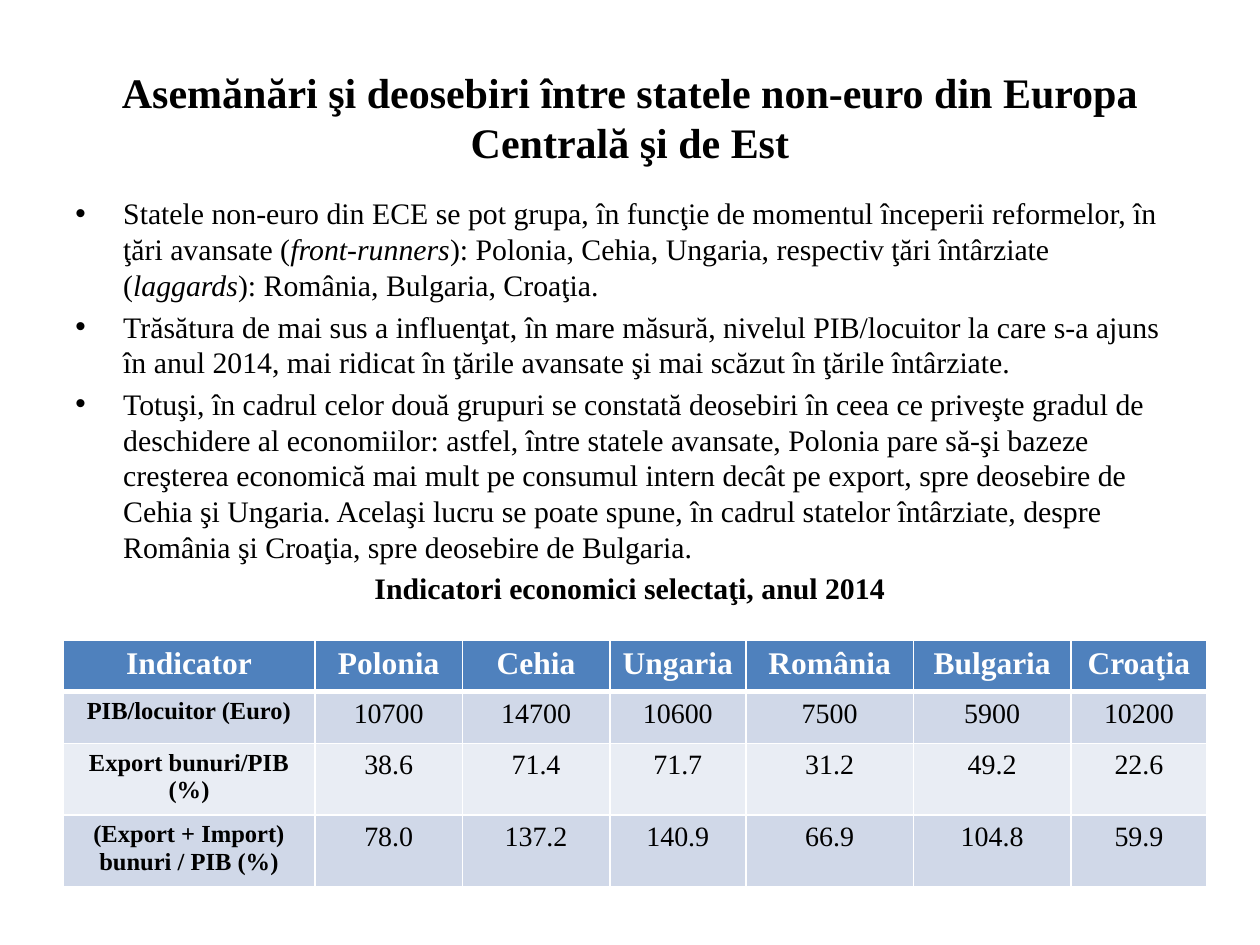
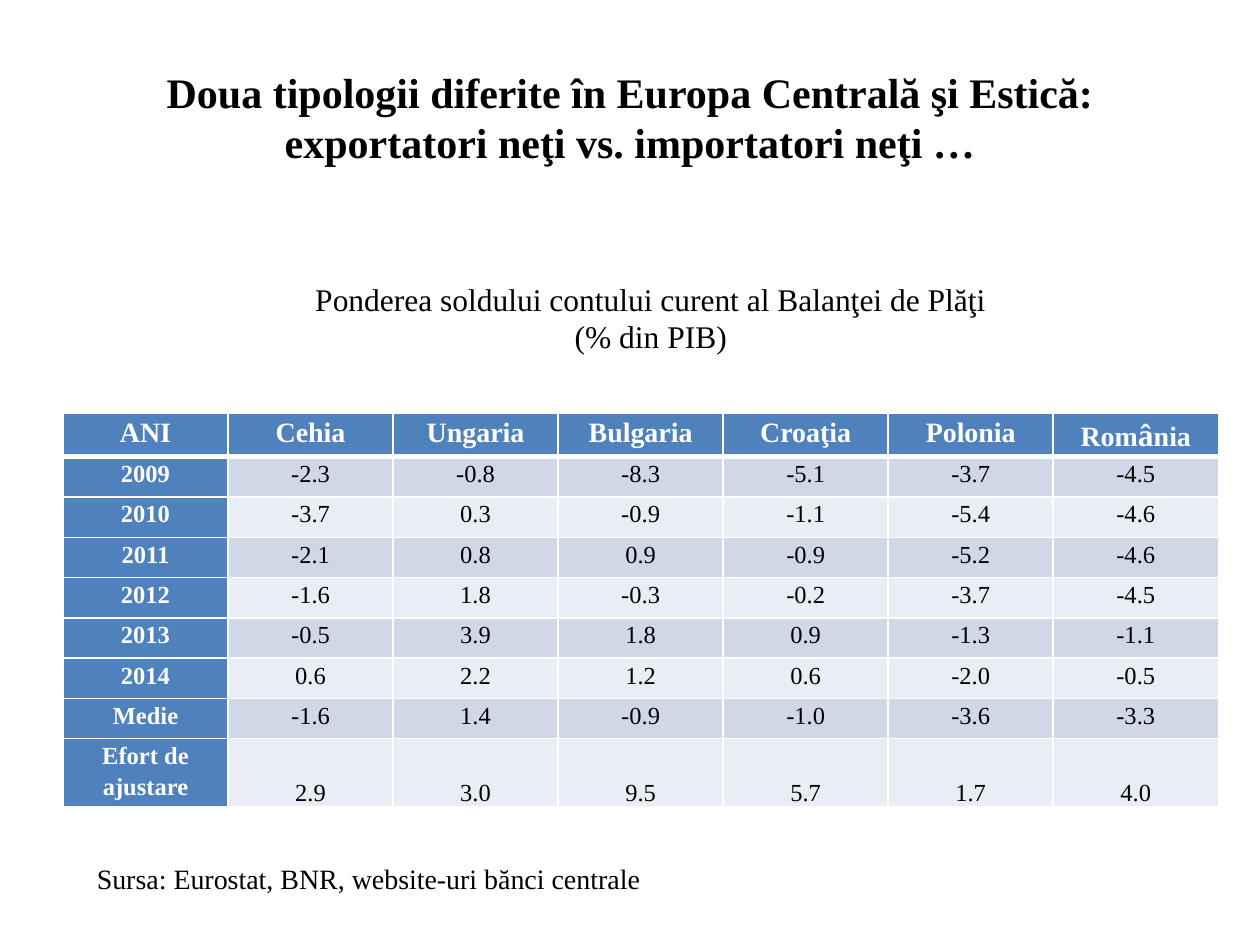
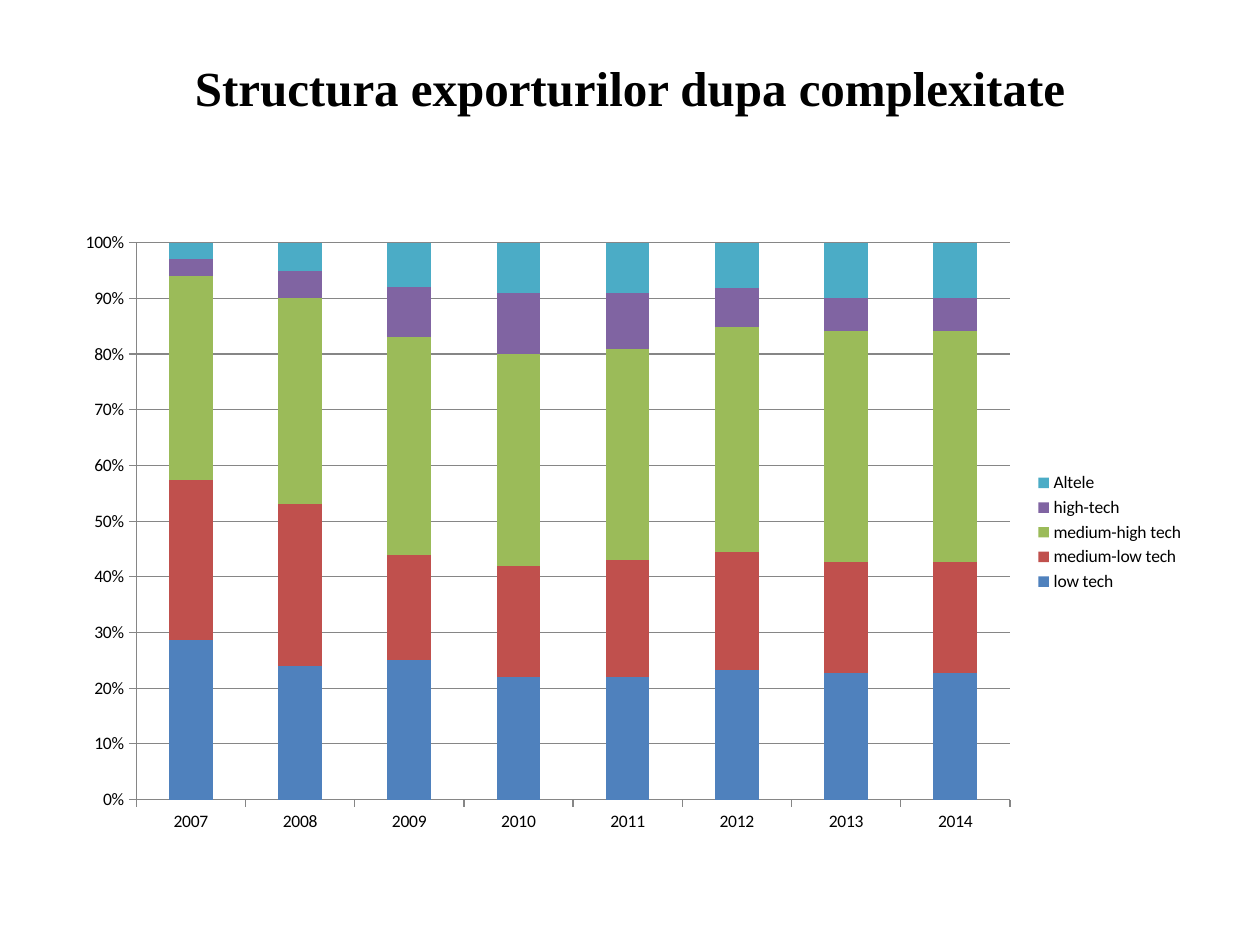
from lxml.etree import SubElement
from pptx import Presentation
from pptx.chart.data import CategoryChartData
from pptx.dml.color import RGBColor
from pptx.enum.chart import XL_CHART_TYPE, XL_LEGEND_POSITION, XL_TICK_MARK
from pptx.enum.text import MSO_ANCHOR, PP_ALIGN
from pptx.oxml import parse_xml
from pptx.oxml.ns import nsdecls, qn
from pptx.util import Inches, Pt

COLORS = {
    "text": "000000", "white": "FFFFFF", "header": "4F81BD",
    "odd_row": "D0D8E8", "even_row": "E9EDF4", "axis": "868686",
    "low tech": "4F81BD", "medium-low tech": "C0504D",
    "medium-high tech": "9BBB59", "high-tech": "8064A2", "Altele": "4BACC6",
}
FONT = "Times New Roman"
CENTER = PP_ALIGN.CENTER


def write_text(frame, paragraphs, size=18, color="text", bold=False, align=PP_ALIGN.LEFT,
               line_spacing=None, space_before=None, bullet=False):
    """Append paragraphs; each is a string or a list of strings and (string, font settings)."""
    frame.word_wrap = True
    for content in paragraphs:
        first = frame.paragraphs[0]
        paragraph = frame.add_paragraph() if first.runs else first
        paragraph.alignment = align
        paragraph.line_spacing = line_spacing
        paragraph.space_before = space_before
        if bullet:
            properties = paragraph._p.get_or_add_pPr()
            properties.set("marL", str(Inches(0.38)))
            properties.set("indent", str(-Inches(0.38)))
            SubElement(properties, qn("a:buFont"), typeface="Arial")
            SubElement(properties, qn("a:buChar"), char="•")
        for item in [content] if isinstance(content, str) else content:
            text, settings = (item, {}) if isinstance(item, str) else item
            run = paragraph.add_run()
            run.text = text
            run.font.name = FONT
            run.font.size = Pt(settings.get("size", size))
            run.font.bold = bold
            run.font.italic = settings.get("italic", False)
            run.font.color.rgb = RGBColor.from_string(COLORS[color])


def add_banded_table(slide, rows, left, top, widths, heights, header_size, label_size, value_size,
                     label_filled=False, line_spacing=None, compact=False):
    table = slide.shapes.add_table(len(rows), len(widths), Inches(left), Inches(top),
                                   Inches(sum(widths)), Inches(sum(heights))).table
    table.first_col = label_filled
    for column, width in zip(table.columns, widths):
        column.width = Inches(width)
    for row_index, (row, values) in enumerate(zip(table.rows, rows)):
        row.height = Inches(heights[row_index])
        for column_index, (cell, value) in enumerate(zip(row.cells, values)):
            is_header, is_label = row_index == 0, column_index == 0
            filled = is_header or (is_label and label_filled)
            band = "odd_row" if row_index % 2 else "even_row"
            cell.fill.solid()
            cell.fill.fore_color.rgb = RGBColor.from_string(COLORS["header" if filled else band])
            if compact:
                cell.margin_left = cell.margin_right = Inches(0.07)
                cell.margin_top = cell.margin_bottom = 0
            size = header_size if is_header else label_size if is_label else value_size
            write_text(cell.text_frame, [value], size=size, color="white" if filled else "text",
                       bold=is_header or is_label, align=CENTER, line_spacing=line_spacing)
            border_widths = {"L": 1, "R": 1, "T": 3 if row_index == 1 else 1, "B": 3 if is_header else 1}
            for position, (side, width) in enumerate(border_widths.items()):
                cell._tc.get_or_add_tcPr().insert(position, parse_xml(
                    f'<a:ln{side} {nsdecls("a")} w="{Pt(width)}"><a:solidFill>'
                    f'<a:srgbClr val="{COLORS["white"]}"/></a:solidFill></a:ln{side}>'))
    return table


presentation = Presentation()
presentation.slide_width, presentation.slide_height = Inches(10), Inches(7.5)

# Titles shared by all slides: lines, size, bottom margin
titles = [
    (["Asemănări şi deosebiri între statele non-euro din Europa Centrală şi de Est"], 24, 0.05),
    (["Doua tipologii diferite în Europa Centrală şi Estică:",
      "exportatori neţi vs. importatori neţi …"], 24, 0.05),
    (["Structura exporturilor dupa complexitate"], 28, 0.52),
]
slides = []
for lines, size, bottom_margin in titles:
    slide = presentation.slides.add_slide(presentation.slide_layouts[6])
    frame = slide.shapes.add_textbox(Inches(0.5), Inches(0.3), Inches(9), Inches(1.25)).text_frame
    frame.vertical_anchor = MSO_ANCHOR.MIDDLE
    frame.margin_bottom = Inches(bottom_margin)
    write_text(frame, lines, size=size, bold=True, align=CENTER)
    slides.append(slide)
similarities_slide, typologies_slide, exports_slide = slides

# Slide 1: similarities and differences
body = similarities_slide.shapes.add_textbox(Inches(0.5), Inches(1.5), Inches(9), Inches(5.75)).text_frame
write_text(body, [
    ["Statele non-euro din ECE se pot grupa, în funcţie de momentul începerii reformelor, în ţări avansate (",
     ("front-runners", {"italic": True}),
     "): Polonia, Cehia, Ungaria, respectiv ţări întârziate (",
     ("laggards", {"italic": True}),
     "): România, Bulgaria, Croaţia."],
    "Trăsătura de mai sus a influenţat, în mare măsură, nivelul PIB/locuitor la care s-a ajuns în anul 2014, "
    "mai ridicat în ţările avansate şi mai scăzut în ţările întârziate.",
    "Totuşi, în cadrul celor două grupuri se constată deosebiri în ceea ce priveşte gradul de deschidere al "
    "economiilor: astfel, între statele avansate, Polonia pare să-şi bazeze creşterea economică mai mult pe "
    "consumul intern decât pe export, spre deosebire de Cehia şi Ungaria. Acelaşi lucru se poate spune, în "
    "cadrul statelor întârziate, despre România şi Croaţia, spre deosebire de Bulgaria.",
], size=17, space_before=Pt(3.4), bullet=True)
write_text(body, ["Indicatori economici selectaţi, anul 2014"], size=17, bold=True, align=CENTER,
           space_before=Pt(3.4))

indicator_rows = [
    ["Indicator", "Polonia", "Cehia", "Ungaria", "România", "Bulgaria", "Croaţia"],
    ["PIB/locuitor (Euro)", "10700", "14700", "10600", "7500", "5900", "10200"],
    ["Export bunuri/PIB (%)", "38.6", "71.4", "71.7", "31.2", "49.2", "22.6"],
    ["(Export + Import) bunuri / PIB (%)", "78.0", "137.2", "140.9", "66.9", "104.8", "59.9"],
]
add_banded_table(similarities_slide, indicator_rows, 0.5, 5.08, [2, 1.17, 1.17, 1.08, 1.33, 1.25, 1.08],
                 [0.41, 0.41, 0.53, 0.53], header_size=18, label_size=14, value_size=16)

# Slide 2: current account balances
caption = typologies_slide.shapes.add_textbox(Inches(1.08), Inches(2.17), Inches(8.17), Inches(1.31))
write_text(caption.text_frame, ["Ponderea soldului contului curent al Balanţei de Plăţi", "(% din PIB)"],
           align=CENTER)
balance_rows = [
    ["ANI", "Cehia", "Ungaria", "Bulgaria", "Croaţia", "Polonia", ["Rom", ("â", {"size": 18}), "nia"]],
    ["2009", "-2.3", "-0.8", "-8.3", "-5.1", "-3.7", "-4.5"],
    ["2010", "-3.7", "0.3", "-0.9", "-1.1", "-5.4", "-4.6"],
    ["2011", "-2.1", "0.8", "0.9", "-0.9", "-5.2", "-4.6"],
    ["2012", "-1.6", "1.8", "-0.3", "-0.2", "-3.7", "-4.5"],
    ["2013", "-0.5", "3.9", "1.8", "0.9", "-1.3", "-1.1"],
    ["2014", "0.6", "2.2", "1.2", "0.6", "-2.0", "-0.5"],
    ["Medie", "-1.6", "1.4", "-0.9", "-1.0", "-3.6", "-3.3"],
    ["Efort de ajustare", "2.9", "3.0", "9.5", "5.7", "1.7", "4.0"],
]
balance_table = add_banded_table(typologies_slide, balance_rows, 0.5, 3.28, [1.31] * 7,
                                 [0.32] * 8 + [0.53], header_size=16, label_size=14, value_size=14,
                                 label_filled=True, line_spacing=1.15, compact=True)
for column_index in range(1, 7):
    balance_table.cell(8, column_index).vertical_anchor = MSO_ANCHOR.BOTTOM

source_note = typologies_slide.shapes.add_textbox(Inches(0.67), Inches(6.79), Inches(5.83), Inches(0.37))
write_text(source_note.text_frame, ["Sursa: Eurostat, BNR, website-uri bănci centrale"], size=16)

# Slide 3: export structure by complexity
chart_data = CategoryChartData()
chart_data.categories = [str(year) for year in range(2007, 2015)]
export_shares = {
    "low tech": [29, 24, 25, 22, 22, 23, 23, 23],
    "medium-low tech": [29, 29, 19, 20, 21, 21, 20, 20],
    "medium-high tech": [37, 37, 39, 38, 38, 40, 42, 42],
    "high-tech": [3, 5, 9, 11, 10, 7, 6, 6],
    "Altele": [3, 5, 8, 9, 9, 8, 10, 10],
}
for name, values in export_shares.items():
    chart_data.add_series(name, values)
chart = exports_slide.shapes.add_chart(XL_CHART_TYPE.COLUMN_STACKED_100, Inches(0.5), Inches(1.75),
                                       Inches(9), Inches(4.95), chart_data).chart
chart.has_title = False
chart.font.name = "Calibri"
chart.font.size = Pt(10)
chart.font.color.rgb = RGBColor.from_string(COLORS["text"])
chart.has_legend = True
chart.legend.position = XL_LEGEND_POSITION.RIGHT
chart.legend.include_in_layout = False

plot = chart.plots[0]
plot.gap_width, plot.overlap = 150, 100
plot.vary_by_categories = False
for series in plot.series:
    series.format.fill.solid()
    series.format.fill.fore_color.rgb = RGBColor.from_string(COLORS[series.name])

chart.value_axis.has_major_gridlines = True
chart.value_axis.tick_labels.number_format = "0%"
chart.value_axis.tick_labels.number_format_is_linked = False
for axis in (chart.category_axis, chart.value_axis):
    axis.major_tick_mark = XL_TICK_MARK.OUTSIDE
for part in (chart.category_axis, chart.value_axis, chart.value_axis.major_gridlines):
    part.format.line.color.rgb = RGBColor.from_string(COLORS["axis"])
    part.format.line.width = Pt(0.75)

presentation.save("out.pptx")
